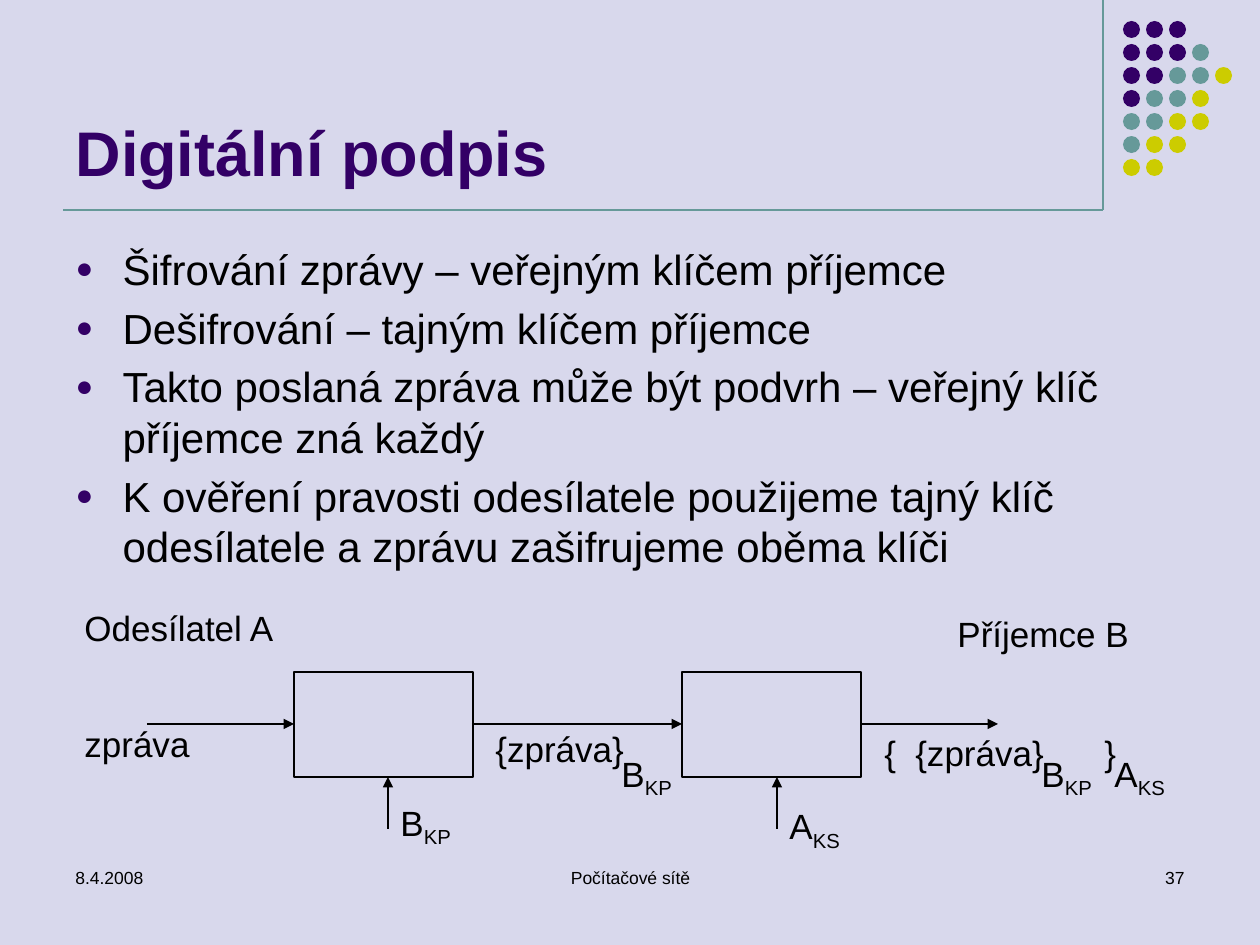
from lxml.etree import SubElement
from pptx import Presentation
from pptx.dml.color import RGBColor
from pptx.enum.shapes import MSO_CONNECTOR, MSO_SHAPE
from pptx.enum.text import MSO_ANCHOR, MSO_AUTO_SIZE, PP_ALIGN
from pptx.oxml.ns import qn
from pptx.util import Emu, Pt

SCALE = 914400 / 126
INK, PLUM, TEAL, LIME = "000000", "330066", "669999", "CCCC00"
DOTS = ["PPP", "PPPT", "PPTTL", "PTTL", "TTLL", "TLL", "LL"]
HUES = {"P": PLUM, "T": TEAL, "L": LIME}
POINTS = [
    "Šifrování zprávy – veřejným klíčem příjemce",
    "Dešifrování – tajným klíčem příjemce",
    "Takto poslaná zpráva může být podvrh – veřejný klíč příjemce zná každý",
    "K ověření pravosti odesílatele použijeme tajný klíč odesílatele a zprávu zašifrujeme oběma klíči",
]
FOOTER = [
    (63, 294, "8.4.2008", PP_ALIGN.LEFT),
    (431, 399, "Počítačové sítě", PP_ALIGN.CENTER),
    (903, 294, "37", PP_ALIGN.RIGHT),
]
LABELS = [
    (72, 600, 215, "Odesílatel A"),
    (945, 606, 197, "Příjemce B"),
    (72, 716, 130, "zpráva"),
    (483, 721, 154, "{zpráva}"),
    (903, 725, 154, "{zpráva}"),
    (872, 725, 63, "{"),
    (1092, 725, 37, "}"),
]
KEYS = [
    (388, 795, "B", "KP"),
    (777, 798, "A", "KS"),
    (609, 746, "B", "KP"),
    (1029, 746, "B", "KP"),
    (1102, 746, "A", "KS"),
]
ARROWS = [
    (147, 724, 294, 724),
    (472, 724, 682, 724),
    (861, 724, 998, 724),
    (388, 829, 388, 777),
    (777, 829, 777, 777),
]


def px(n):
    return Emu(round(n * SCALE))


def paint(color, code):
    color.rgb = RGBColor.from_string(code)


def place(shape, x, y, w, h):
    shape.left, shape.top, shape.width, shape.height = map(px, (x, y, w, h))


def add_run(para, text, size, code=INK, bold=False, base=None):
    run = para.add_run()
    run.text = text
    run.font.name = "Arial"
    run.font.size = Pt(size)
    run.font.bold = bold
    paint(run.font.color, code)
    if base:
        run.font._element.set("baseline", str(base))


def add_text(slide, x, y, w, h, size, parts, align=PP_ALIGN.LEFT, wrap=True):
    frame = slide.shapes.add_textbox(px(x), px(y), px(w), px(h)).text_frame
    frame.word_wrap = wrap
    frame.auto_size = MSO_AUTO_SIZE.NONE if wrap else MSO_AUTO_SIZE.SHAPE_TO_FIT_TEXT
    para = frame.paragraphs[0]
    para.alignment = align
    for text, base in parts:
        add_run(para, text, size, base=base)


def add_line(slide, x1, y1, x2, y2, code, arrow=False):
    line = slide.shapes.add_connector(MSO_CONNECTOR.STRAIGHT, px(x1), px(y1), px(x2), px(y2))
    line.line.width = Pt(0.75)
    paint(line.line.color, code)
    if arrow:
        SubElement(line.line._get_or_add_ln(), qn("a:tailEnd"), type="triangle")
    SubElement(line._element.spPr, qn("a:effectLst"))


def add_dot(slide, x, y, code):
    dot = slide.shapes.add_shape(MSO_SHAPE.OVAL, px(x), px(y), px(17), px(17))
    dot.shadow.inherit = False
    dot.fill.solid()
    paint(dot.fill.fore_color, code)
    dot.line.fill.background()


def add_box(slide, x, y, w, h):
    box = slide.shapes.add_shape(MSO_SHAPE.RECTANGLE, px(x), px(y), px(w), px(h))
    box.shadow.inherit = False
    box.fill.background()
    box.line.width = Pt(0.75)
    paint(box.line.color, INK)


def add_bullet(para):
    props = para._p.get_or_add_pPr()
    props.set("marL", str(px(47)))
    props.set("indent", str(px(-47)))
    SubElement(SubElement(props, qn("a:buClr")), qn("a:srgbClr"), val=PLUM)
    SubElement(props, qn("a:buSzPct"), val="70000")
    SubElement(props, qn("a:buFont"), typeface="Arial")
    SubElement(props, qn("a:buChar"), char="●")


def fill_title(title):
    place(title, 63, 16, 1040, 179)
    frame = title.text_frame
    frame.auto_size = MSO_AUTO_SIZE.NONE
    frame.vertical_anchor = MSO_ANCHOR.BOTTOM
    para = frame.paragraphs[0]
    para.alignment = PP_ALIGN.LEFT
    add_run(para, "Digitální podpis", 36, PLUM, True)


def fill_body(body):
    place(body, 63, 237, 1134, 362)
    frame = body.text_frame
    frame.auto_size = MSO_AUTO_SIZE.NONE
    for i, text in enumerate(POINTS):
        para = frame.add_paragraph() if i else frame.paragraphs[0]
        para.space_before = Pt(4.8)
        add_bullet(para)
        add_run(para, text, 24)


def main():
    deck = Presentation()
    deck.slide_width, deck.slide_height = px(1260), px(945)
    slide = deck.slides.add_slide(deck.slide_layouts[1])
    slide.background.fill.solid()
    paint(slide.background.fill.fore_color, "D8D8EC")

    add_line(slide, 1103, 0, 1103, 210, TEAL)
    add_line(slide, 63, 210, 1103, 210, TEAL)
    for row, marks in enumerate(DOTS):
        for col, mark in enumerate(marks):
            add_dot(slide, 1123 + 23 * col, 21 + 23 * row, HUES[mark])

    fill_title(slide.shapes.title)
    fill_body(slide.placeholders[1])
    for x, w, text, align in FOOTER:
        add_text(slide, x, 861, w, 63, 10, [(text, None)], align)

    for x in (294, 682):
        add_box(slide, x, 672, 179, 105)
    for ends in ARROWS:
        add_line(slide, *ends, INK, True)
    for x, y, w, text in LABELS:
        add_text(slide, x, y, w, 54, 20, [(text, None)], wrap=False)
    for x, y, name, sub in KEYS:
        add_text(slide, x, y, 79, 54, 20, [(name, None), (sub, -25000)], wrap=False)
    deck.save("out.pptx")


if __name__ == "__main__":
    main()
